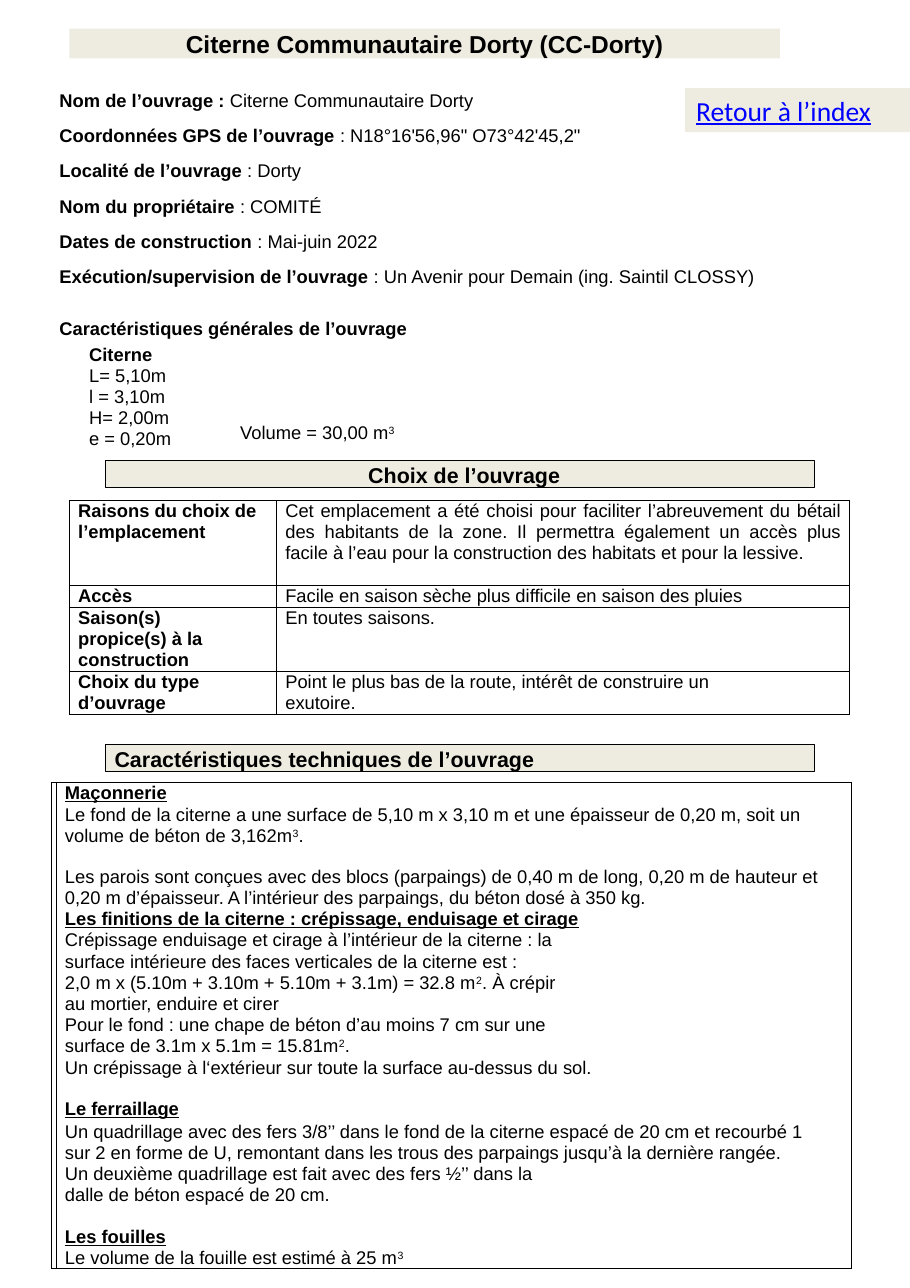
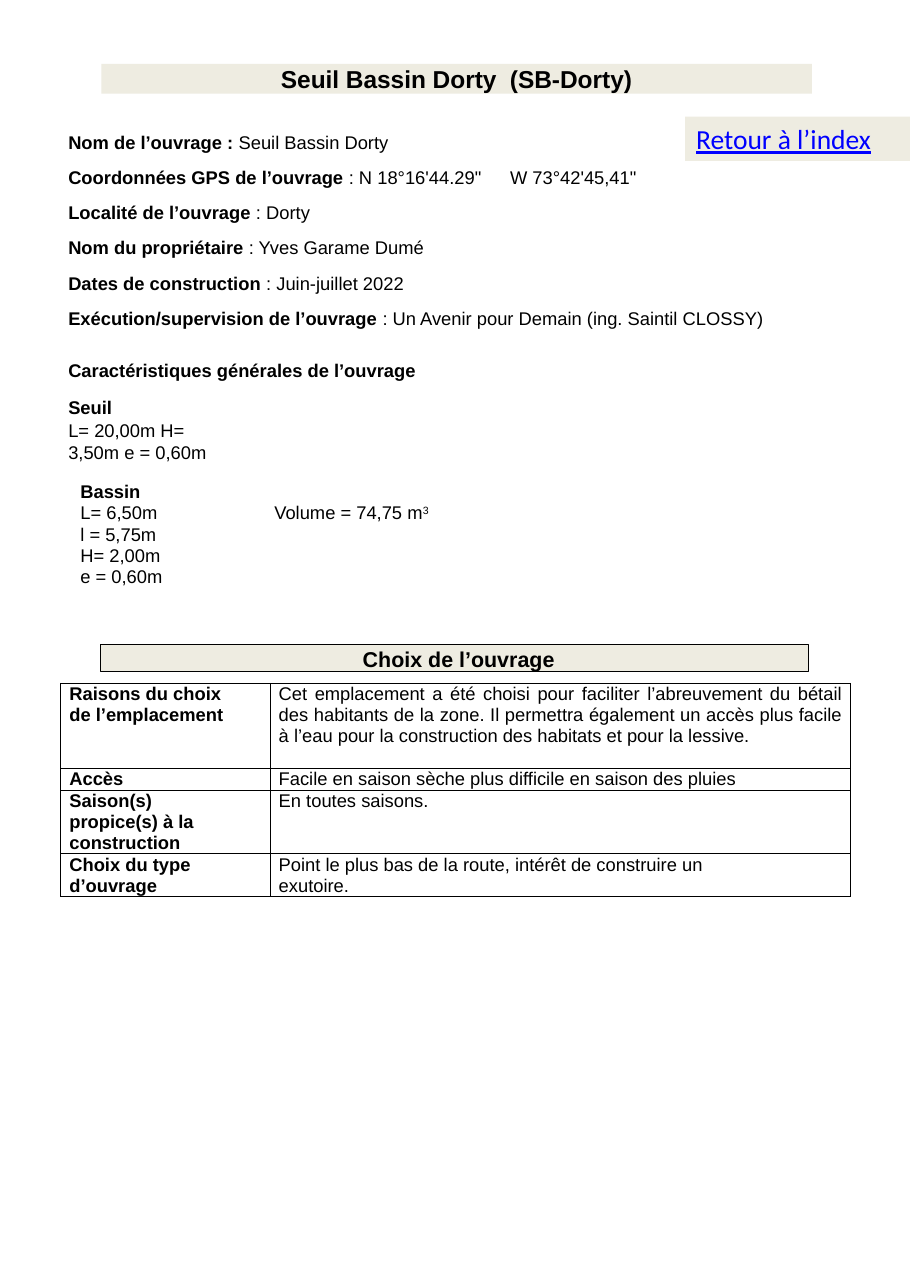
from lxml import etree
from pptx import Presentation
from pptx.dml.color import RGBColor
from pptx.enum.shapes import MSO_SHAPE
from pptx.enum.text import MSO_ANCHOR, PP_ALIGN
from pptx.oxml.ns import qn
from pptx.util import Inches, Pt

RECTANGLE = MSO_SHAPE.RECTANGLE
TOP = MSO_ANCHOR.TOP
LEFT, CENTER, JUSTIFY = PP_ALIGN.LEFT, PP_ALIGN.CENTER, PP_ALIGN.JUSTIFY

BLACK = RGBColor(0x00, 0x00, 0x00)
LINK_BLUE = RGBColor(0x00, 0x00, 0xFF)
BAND_BEIGE = RGBColor(0xEE, 0xEC, 0xE1)
LINE_PITCH = Pt(13.8)


def write(frame, paragraphs, size=12, font="Arial", color=BLACK, align=LEFT,
          pitch=None, underline_bold=False):
    """Fill a frame with (text, space before); *bold* and ^superscript^ are marked."""
    frame.word_wrap = True
    for index, (text, space_before) in enumerate(paragraphs):
        paragraph = frame.add_paragraph() if index else frame.paragraphs[0]
        paragraph.alignment = align
        paragraph.space_before = Pt(space_before)
        if pitch:
            paragraph.line_spacing = pitch
        paragraph.font.size = Pt(size)
        paragraph.font.name = font
        paragraph.font.color.rgb = color
        for part_index, part in enumerate(text.split("*")):
            bold = part_index % 2 == 1
            for piece_index, piece in enumerate(part.split("^")):
                if not piece:
                    continue
                run = paragraph.add_run()
                run.text = piece
                run.font.bold = bold
                if bold and underline_bold:
                    run.font.underline = True
                if piece_index % 2:
                    run._r.get_or_add_rPr().set("baseline", "28000")


def add_grid(slide, left, top, widths, heights):
    """Add a plain table with thin black borders and return it."""
    table = slide.shapes.add_table(
        len(heights), len(widths), Inches(left), Inches(top),
        Inches(sum(widths)), Inches(sum(heights))).table
    table.first_row = table.horz_banding = False
    for column, width in zip(table.columns, widths):
        column.width = Inches(width)
    for row, height in zip(table.rows, heights):
        row.height = Inches(height)
    for cell in table.iter_cells():
        cell.margin_left = cell.margin_right = 0
        cell.margin_top = cell.margin_bottom = 0
        properties = cell._tc.get_or_add_tcPr()
        for side in ("a:lnL", "a:lnR", "a:lnT", "a:lnB"):
            line = etree.SubElement(properties, qn(side), w=str(Pt(0.5)))
            fill = etree.SubElement(line, qn("a:solidFill"))
            etree.SubElement(fill, qn("a:srgbClr"), val=str(BLACK))
        cell.fill.background()
    return table


# Content of the two sheets
CHOICE_TITLE = "*Choix de l’ouvrage*"
FIELDS = ["*Nom de l’ouvrage :* ", "*Coordonnées GPS de l’ouvrage* : ",
          "*Localité de l’ouvrage* : ", "*Nom du propriétaire* : ",
          "*Dates de construction* : ", "*Exécution/supervision de l’ouvrage* : "]
SUPERVISOR = "Un Avenir pour Demain (ing. Saintil CLOSSY)"
CHOICE_ROWS = [
    (None, ["Cet emplacement a été choisi pour faciliter l’abreuvement du bétail "
            "des habitants de la zone. Il permettra également un accès plus facile "
            "à l’eau pour la construction des habitats et pour la lessive."]),
    (["Accès"], ["Facile en saison sèche plus difficile en saison des pluies"]),
    (["Saison(s)", "propice(s) à la", "construction"], ["En toutes saisons."]),
    (["Choix du type", "d’ouvrage"],
     ["Point le plus bas de la route, intérêt de construire un", "exutoire."]),
]
CHOICE_HEIGHTS = [0.77, 0.2, 0.58, 0.39]

SHEETS = [
    {
        "title": "*Citerne Communautaire Dorty (CC-Dorty)*",
        "title_at": (0.63, 0.26), "index_top": 0.8, "details_at": (0.54, 0.8),
        "values": ["Citerne Communautaire Dorty", "N18°16'56,96\" O73°42'45,2\"",
                   "Dorty", "COMITÉ", "Mai-juin 2022", SUPERVISOR],
        "extra": [],
        "sizes": ["*Citerne*", "L= 5,10m", "l = 3,10m", "H= 2,00m", "e = 0,20m"],
        "sizes_at": (0.81, 3.11),
        "volume": "Volume = 30,00 m^3^", "volume_at": (2.18, 3.81),
        "choice_at": (0.96, 4.18), "table_at": (0.63, 4.54), "columns": [1.88, 5.2],
        "reasons": ["Raisons du choix de", "l’emplacement"],
    },
    {
        "title": "*Seuil Bassin Dorty  (SB-Dorty)*",
        "title_at": (0.92, 0.58), "index_top": 1.06, "details_at": (0.62, 1.18),
        "values": ["Seuil Bassin Dorty", "N 18°16'44.29\"\tW 73°42'45,41\"",
                   "Dorty", "Yves Garame Dumé", "Juin-juillet 2022", SUPERVISOR],
        "extra": [("*Seuil*", 10), ("L= 20,00m H=", 0.7), ("3,50m e = 0,60m", 0)],
        "sizes": ["*Bassin*", "L= 6,50m", "l = 5,75m", "H= 2,00m", "e = 0,60m"],
        "sizes_at": (0.73, 4.36),
        "volume": "Volume = 74,75 m^3^", "volume_at": (2.49, 4.54),
        "choice_at": (0.91, 5.85), "table_at": (0.55, 6.2), "columns": [1.9, 5.27],
        "reasons": ["Raisons du choix", "de l’emplacement"],
    },
]

TECHNICAL_TEXT = [
    ("*Maçonnerie*", 0),
    ("Le fond de la citerne a une surface de 5,10 m x 3,10 m et une épaisseur de "
     "0,20 m, soit un volume de béton de 3,162m^3^.", 0.7),
    ("Les parois sont conçues avec des blocs (parpaings) de 0,40 m de long, 0,20 m "
     "de hauteur et 0,20 m d’épaisseur. A l’intérieur des parpaings, du béton dosé "
     "à 350 kg.", 12.8),
    ("*Les finitions de la citerne : crépissage, enduisage et cirage*", 0),
    ("Crépissage enduisage et cirage à l’intérieur de la citerne : la", 0),
    ("surface intérieure des faces verticales de la citerne est :", 0),
    ("2,0 m x (5.10m + 3.10m + 5.10m + 3.1m) = 32.8 m^2^. À crépir", 0),
    ("au mortier, enduire et cirer", 0),
    ("Pour le fond : une chape de béton d’au moins 7 cm sur une", 0),
    ("surface de 3.1m x 5.1m = 15.81m^2^.", 0),
    ("Un crépissage à l‘extérieur sur toute la surface au-dessus du sol.", 0.7),
    ("*Le ferraillage*", 13),
    ("Un quadrillage avec des fers 3/8’’ dans le fond de la citerne espacé de 20 cm "
     "et recourbé 1 sur 2 en forme de U, remontant dans les trous des parpaings "
     "jusqu’à la dernière rangée.", 0.7),
    ("Un deuxième quadrillage est fait avec des fers ½’’ dans la", 0),
    ("dalle de béton espacé de 20 cm.", 0),
    ("*Les fouilles*", 13.5),
    ("Le volume de la fouille est estimé à 25 m^3^", 0),
]

presentation = Presentation()
presentation.slide_width = Inches(8.26)
presentation.slide_height = Inches(11.69)

for sheet in SHEETS:
    slide = presentation.slides.add_slide(presentation.slide_layouts[6])

    # Beige bands: title, section headings, link to the index
    bands = [
        (*sheet["title_at"], 6.45, 0.27, sheet["title"], 16, CENTER, False),
        (*sheet["choice_at"], 6.43, 0.24, CHOICE_TITLE, 14, CENTER, True),
        (6.22, sheet["index_top"], 2.04, 0.4, "Retour à l’index", 18, LEFT, False),
    ]
    if sheet is SHEETS[0]:
        bands.append((0.96, 6.76, 6.43, 0.24,
                      "*Caractéristiques techniques de l’ouvrage*", 14, LEFT, True))
    for left, top, width, height, text, size, align, outlined in bands:
        band = slide.shapes.add_shape(RECTANGLE, Inches(left), Inches(top),
                                      Inches(width), Inches(height))
        band.shadow.inherit = False
        band.fill.solid()
        band.fill.fore_color.rgb = BAND_BEIGE
        if outlined:
            band.line.color.rgb = BLACK
            band.line.width = Pt(0.5)
        else:
            band.line.fill.background()
        frame = band.text_frame
        frame.vertical_anchor = TOP
        if size == 18:
            write(frame, [(text, 0)], size, "Calibri", LINK_BLUE)
            frame.paragraphs[0].font.underline = True
        else:
            frame.margin_left = Inches(0.08 if outlined else 0)
            frame.margin_right = frame.margin_bottom = 0
            frame.margin_top = Inches(0.01 if outlined else 0)
            write(frame, [(text, 0.5)], size, align=align)

    # Details, dimensions and volume
    details = [(field + value, 8.6 if index else 1)
               for index, (field, value) in enumerate(zip(FIELDS, sheet["values"]))]
    details.append(("*Caractéristiques générales de l’ouvrage*", 19.5))
    details += sheet["extra"]
    dimensions = [(text, 0) for text in sheet["sizes"]]
    boxes = [
        (sheet["details_at"], 7.1, 2.32, details, None),
        (sheet["sizes_at"], 1, 1, dimensions, LINE_PITCH),
        (sheet["volume_at"], 1.6, 0.23, [(sheet["volume"], 1)], None),
    ]
    for (left, top), width, height, paragraphs, pitch in boxes:
        box = slide.shapes.add_textbox(Inches(left), Inches(top),
                                       Inches(width), Inches(height))
        frame = box.text_frame
        frame.margin_left = frame.margin_right = frame.margin_bottom = 0
        frame.margin_top = Inches(0.01)
        write(frame, paragraphs, pitch=pitch)
        # Tab stop between the two coordinates
        for paragraph in frame.paragraphs:
            if "\t" in paragraph.text:
                properties = paragraph._p.get_or_add_pPr()
                tabs = etree.Element(qn("a:tabLst"))
                etree.SubElement(tabs, qn("a:tab"), pos=str(Inches(4.01)), algn="l")
                properties.find(qn("a:defRPr")).addprevious(tabs)

    # Reasons for the choice
    table = add_grid(slide, *sheet["table_at"], sheet["columns"], CHOICE_HEIGHTS)
    for row_index, (label, answer) in enumerate(CHOICE_ROWS):
        label_lines = [(f"*{line}*", 0) for line in label or sheet["reasons"]]
        answer_lines = [(line, 0) for line in answer]
        for column_index, lines in enumerate((label_lines, answer_lines)):
            cell = table.cell(row_index, column_index)
            cell.margin_left = Inches(0.08)
            cell.margin_right = Inches(0.07 if column_index else 0)
            align = JUSTIFY if column_index and row_index == 0 else LEFT
            write(cell.text_frame, lines, align=align, pitch=LINE_PITCH)

    # Technical description, first sheet only
    if sheet is SHEETS[0]:
        table = add_grid(slide, 0.47, 7.1, [0.03, 7.22], [4.39])
        cell = table.cell(0, 1)
        cell.margin_left, cell.margin_right = Inches(0.08), Inches(0.2)
        write(cell.text_frame, TECHNICAL_TEXT, pitch=LINE_PITCH, underline_bold=True)

presentation.save("out.pptx")
